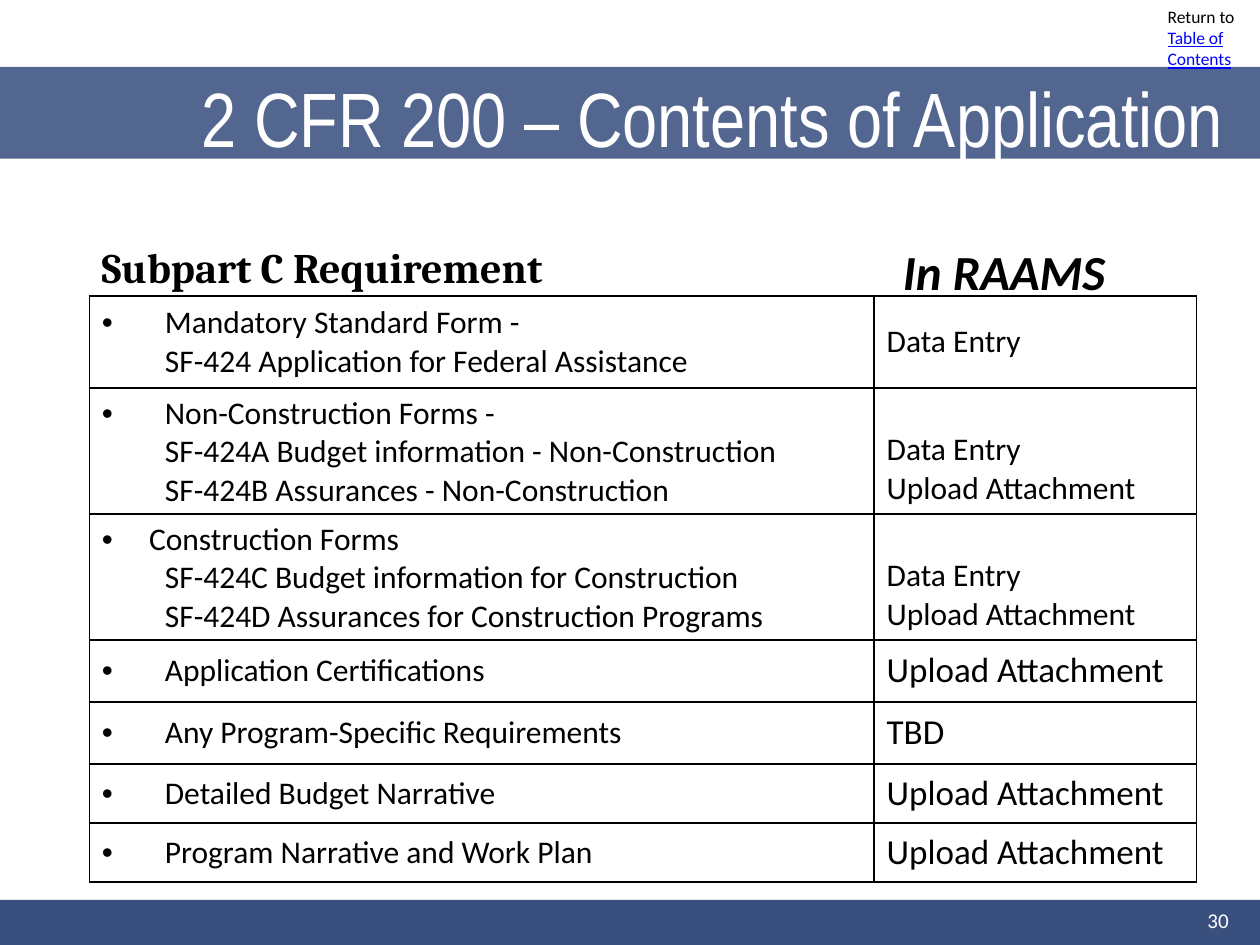
from dataclasses import dataclass

from lxml import etree
from pptx import Presentation
from pptx import util as u
from pptx.dml.color import RGBColor
from pptx.enum import shapes, text
from pptx.oxml import ns

COLORS = {"navy": "39507F", "white": "FFFFFF", "black": "000000", "link": "0000FF"}
HANG = 1.27
UPLOAD = "Upload Attachment"


@dataclass
class Box:
    left: float
    top: float
    width: float
    height: float

    def lengths(self) -> list:
        return [u.Cm(v) for v in (self.left, self.top, self.width, self.height)]


@dataclass
class Requirement:
    height: float
    forms: list
    answers: list
    answer_size: int = 20
    answer_anchor: text.MSO_ANCHOR = text.MSO_ANCHOR.MIDDLE
    hang: float = HANG


BOTTOM = text.MSO_ANCHOR.BOTTOM
BOTH = ["Data Entry", UPLOAD]
REQUIREMENTS = [
    Requirement(1.85, ["Mandatory Standard Form -",
                       "SF-424 Application for Federal Assistance"], ["Data Entry"], 18),
    Requirement(2.54, ["Non-Construction Forms -",
                       "SF-424A Budget information - Non-Construction",
                       "SF-424B Assurances - Non-Construction"], BOTH, 18, BOTTOM),
    Requirement(2.54, ["Construction Forms",
                       "SF-424C Budget information for Construction",
                       "SF-424D Assurances for Construction Programs"], BOTH, 18, BOTTOM, 0.95),
    Requirement(1.25, ["Application Certifications"], [UPLOAD]),
    Requirement(1.25, ["Any Program-Specific Requirements"], ["TBD"]),
    Requirement(1.19, ["Detailed Budget Narrative"], [UPLOAD]),
    Requirement(1.19, ["Program Narrative and Work Plan"], [UPLOAD]),
]


def add_run(paragraph, words: str, size: float, color: str = "black",
            name: str = "Calibri", **styles) -> None:
    run = paragraph.add_run()
    run.text = words
    run.font.color.rgb = RGBColor.from_string(COLORS[color])
    for key, value in {"size": u.Pt(size), "name": name, **styles}.items():
        setattr(run.font, key, value)


def indent(paragraph, left: float, first: float = 0, bullet: bool = False) -> None:
    properties = paragraph._p.get_or_add_pPr()
    properties.set("marL", str(u.Cm(left)))
    properties.set("indent", str(u.Cm(first)))
    if bullet:
        etree.SubElement(properties, ns.qn("a:buFont"), typeface="Arial")
        etree.SubElement(properties, ns.qn("a:buChar"), char="•")


def add_band(slide, box: Box, opacity: int = 100) -> None:
    """Draw a navy strip behind the title."""
    band = slide.shapes.add_shape(shapes.MSO_SHAPE.RECTANGLE, *box.lengths())
    band.shadow.inherit = False
    band.fill.solid()
    band.fill.fore_color.rgb = RGBColor.from_string(COLORS["navy"])
    band.line.fill.background()
    if opacity < 100:
        color = band.element.xpath(".//a:srgbClr")[0]
        etree.SubElement(color, ns.qn("a:alpha"), val=str(opacity * 1000))
    slide.shapes.title.element.addprevious(band.element)


def add_text(slide, box: Box, anchor=text.MSO_ANCHOR.TOP, align=text.PP_ALIGN.LEFT):
    """Add a wrapping text box and return its first paragraph."""
    frame = slide.shapes.add_textbox(*box.lengths()).text_frame
    frame.word_wrap = True
    frame.vertical_anchor = anchor
    paragraph = frame.paragraphs[0]
    paragraph.alignment = align
    return paragraph


def format_title(slide) -> None:
    title = slide.shapes.title
    box = Box(1.27, 0.76, 23.93, 3.18)
    for key, value in zip(("left", "top", "width", "height"), box.lengths()):
        setattr(title, key, value)
    frame = title.text_frame
    frame.auto_size = text.MSO_AUTO_SIZE.NONE
    frame.vertical_anchor = text.MSO_ANCHOR.MIDDLE
    paragraph = frame.paragraphs[0]
    paragraph.alignment = text.PP_ALIGN.LEFT
    indent(paragraph, 2.54)
    add_run(paragraph, "2 CFR 200 – Contents of Application", 44, "white", "Arial Narrow")


def format_cell(cell, lines: list, size: float, anchor) -> list:
    """Fill, border and write a cell; return its paragraphs."""
    properties = cell._tc.get_or_add_tcPr()
    for side in ("lnL", "lnR", "lnT", "lnB"):
        line = etree.SubElement(properties, ns.qn(f"a:{side}"), w=str(u.Pt(1)))
        fill = etree.SubElement(line, ns.qn("a:solidFill"))
        etree.SubElement(fill, ns.qn("a:srgbClr"), val=COLORS["black"])
    cell.fill.background()
    cell.vertical_anchor = anchor
    frame = cell.text_frame
    for number, words in enumerate(lines):
        paragraph = frame.add_paragraph() if number else frame.paragraphs[0]
        add_run(paragraph, words, size)
    return list(frame.paragraphs)


def add_requirements(slide) -> None:
    widths = (15.82, 6.5)
    box = Box(1.8, 5.97, sum(widths), sum(row.height for row in REQUIREMENTS))
    table = slide.shapes.add_table(len(REQUIREMENTS), 2, *box.lengths()).table
    table.first_row = table.horz_banding = False
    for column, width in zip(table.columns, widths):
        column.width = u.Cm(width)
    for number, item in enumerate(REQUIREMENTS):
        table.rows[number].height = u.Cm(item.height)
        heading, *details = format_cell(table.cell(number, 0), item.forms, 18,
                                        text.MSO_ANCHOR.MIDDLE)
        indent(heading, item.hang, -item.hang, bullet=True)
        for paragraph in details:
            indent(paragraph, HANG)
        format_cell(table.cell(number, 1), item.answers, item.answer_size, item.answer_anchor)


def main() -> None:
    presentation = Presentation()
    presentation.slide_width, presentation.slide_height = u.Cm(25.4), u.Cm(19.05)
    slide = presentation.slides.add_slide(presentation.slide_layouts[5])

    add_band(slide, Box(0, 18.14, 25.4, 0.91))
    add_band(slide, Box(0, 1.35, 25.4, 1.85), opacity=87)
    format_title(slide)

    contents = add_text(slide, Box(23.29, 0, 2.11, 1.55))
    add_run(contents, "Return to ", 10)
    add_run(contents, "Table of Contents", 10, "link", underline=True)

    add_run(add_text(slide, Box(1.8, 4.75, 25.2, 3.84)),
            "Subpart C Requirement", 24, name="Cambria", bold=True)
    add_run(add_text(slide, Box(-0.43, 4.75, 22.96, 12.57), align=text.PP_ALIGN.RIGHT),
            "In RAAMS", 28, bold=True, italic=True)
    add_requirements(slide)
    add_run(add_text(slide, Box(19.1, 18.03, 5.92, 1.02), text.MSO_ANCHOR.MIDDLE,
                     text.PP_ALIGN.RIGHT), "30", 12, "white")
    presentation.save("out.pptx")


if __name__ == "__main__":
    main()
